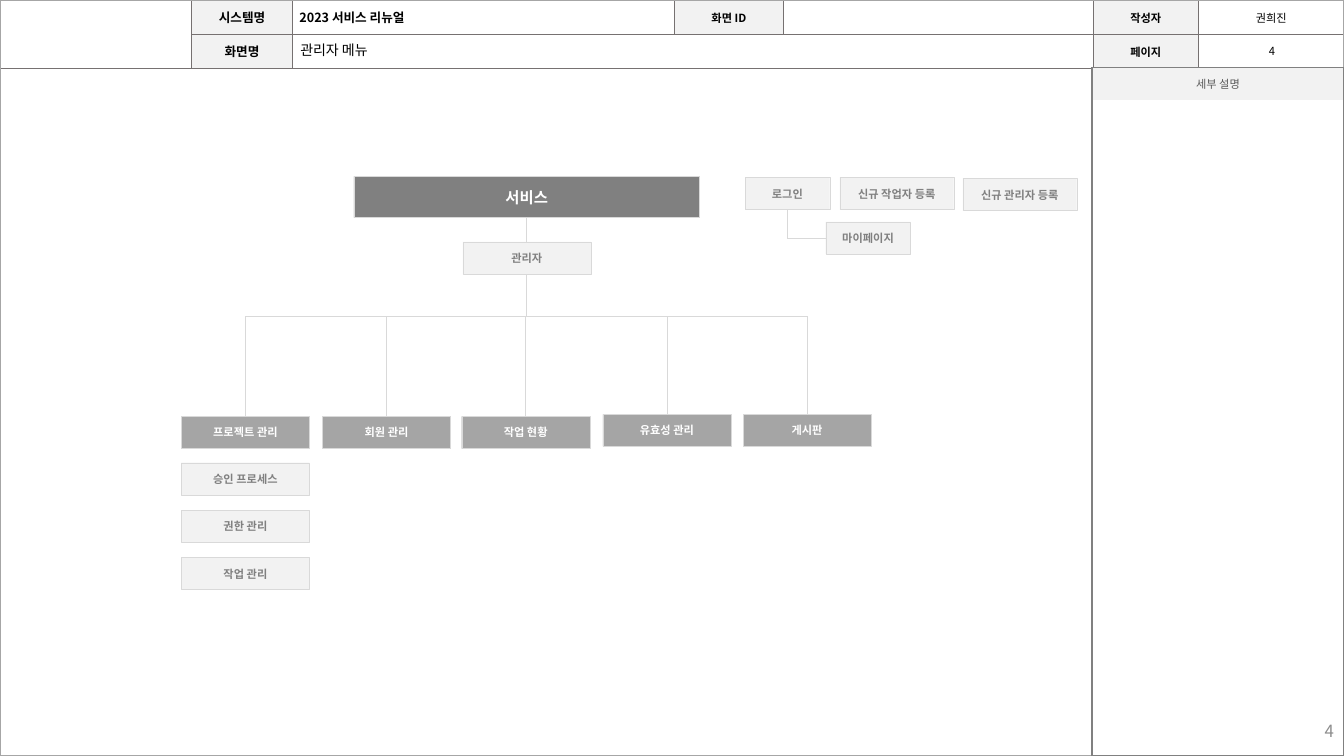
from lxml import etree
from pptx import Presentation
from pptx.dml.color import RGBColor
from pptx.enum import shapes, text
from pptx.oxml.ns import qn
from pptx.util import Inches, Pt

HEADER = {
    "columns": [1.9, 1, 3.79, 1.08, 3.07, 1.05, 1.44],
    "rows": [0.34, 0.34],
    "labels": {"시스템명": (0, 1, 9), "화면명": (1, 1, 9), "화면 ID": (0, 3, 8),
               "작성자": (0, 5, 8), "페이지": (1, 5, 8)},
    "system": "2023 서비스 리뉴얼",
    "author": "권희진",
    "screen": "관리자 메뉴",
}
DETAIL_TITLE = "세부 설명"
PAGE = "4"

# label, left, top, width, height
SITE = ("서비스", 3.51, 1.75, 3.43, 0.41)
ADMIN = ("관리자", 4.59, 2.4, 1.27, 0.32)
LOGIN = ("로그인", 7.39, 1.76, 0.84, 0.32)
MY_PAGE = ("마이페이지", 8.19, 2.2, 0.84, 0.32)
SIGN_UPS = [("신규 작업자 등록", 8.33, 1.76, 1.13, 0.32),
            ("신규 관리자 등록", 9.55, 1.77, 1.13, 0.32)]
# label, left, top
MENUS = [("프로젝트 관리", 1.8, 4.13), ("회원 관리", 3.2, 4.13), ("작업 현황", 4.58, 4.13),
         ("유효성 관리", 5.98, 4.11), ("게시판", 7.37, 4.11)]
PROJECT_PAGES = ["승인 프로세스", "권한 관리", "작업 관리"]
MENU_SIZE = (1.27, 0.32)
PAGE_TOP, PAGE_STEP = 4.59, 0.47
BUS_Y = 3.14

THEME = {
    "font": "Noto Sans CJK KR",
    "black": "000000", "white": "FFFFFF", "detail": "595959", "number": "8C8C8C",
    "dark": "808080", "mid": "A5A5A5", "light": "F2F2F2",
    "outline": "D9D9D9", "frame": "A6A6A6", "grid": "767171",
    "small": 8, "normal": 9, "screen": 10, "site": 11, "page": 12,
}
CENTER, LEFT, RIGHT = text.PP_ALIGN.CENTER, text.PP_ALIGN.LEFT, text.PP_ALIGN.RIGHT
MIDDLE = text.MSO_ANCHOR.MIDDLE


def color(name):
    return RGBColor.from_string(THEME[name])


def write(paragraph, words, size, ink, bold=False, align=CENTER):
    paragraph.text = words
    paragraph.alignment = align
    font = paragraph.font
    font.size, font.bold, font.name = Pt(size), bold, THEME["font"]
    font.color.rgb = color(ink)
    etree.SubElement(font._rPr, qn("a:ea"), typeface=THEME["font"])


def set_borders(cell, ink, width, sides):
    """Draw the given sides (from L, R, T, B) and clear the others."""
    properties = cell._tc.get_or_add_tcPr()
    for index, side in enumerate("LRTB"):
        line = etree.Element(qn("a:ln" + side), w=str(Pt(width)))
        if side in sides:
            fill = etree.SubElement(line, qn("a:solidFill"))
            etree.SubElement(fill, qn("a:srgbClr"), val=THEME[ink])
        else:
            etree.SubElement(line, qn("a:noFill"))
        properties.insert(index, line)


def add_plain_table(slide, left, top, columns, rows):
    """Add a table without style effects, with tight margins and small empty cells."""
    table = slide.shapes.add_table(
        len(rows), len(columns), Inches(left), Inches(top),
        Inches(sum(columns)), Inches(sum(rows))).table
    table.first_row = table.horz_banding = False
    for column, width in zip(table.columns, columns):
        column.width = Inches(width)
    for row, height in zip(table.rows, rows):
        row.height = Inches(height)
    for cell in table.iter_cells():
        cell.fill.background()
        cell.vertical_anchor = MIDDLE
        cell.margin_left = cell.margin_right = Inches(0.05)
        cell.margin_top = cell.margin_bottom = Inches(0.02)
        end = cell.text_frame.paragraphs[0]._p.get_or_add_endParaRPr()
        end.set("sz", str(THEME["small"] * 100))
    return table


def fill_cell(cell, words, size, ink="black", bold=False, align=CENTER, shade=None):
    write(cell.text_frame.paragraphs[0], words, size, ink, bold, align)
    if shade:
        cell.fill.solid()
        cell.fill.fore_color.rgb = color(shade)


def add_text(slide, words, left, top, width, height, size, ink, align, inset=0.1):
    frame = slide.shapes.add_textbox(
        Inches(left), Inches(top), Inches(width), Inches(height)).text_frame
    frame.word_wrap = True
    frame.vertical_anchor = MIDDLE
    frame.margin_left = frame.margin_right = Inches(inset)
    frame.margin_top = frame.margin_bottom = Inches(0.02)
    write(frame.paragraphs[0], words, size, ink, align=align)
    return frame.paragraphs[0]


def add_box(slide, words, left, top, width, height, shade="light", ink="dark", size=THEME["small"]):
    shape = slide.shapes.add_shape(
        shapes.MSO_SHAPE.RECTANGLE, Inches(left), Inches(top), Inches(width), Inches(height))
    shape.shadow.inherit = False
    shape.fill.solid()
    shape.fill.fore_color.rgb = color(shade)
    shape.line.color.rgb = color("outline")
    shape.line.width = Pt(0.25)
    shape.text_frame.vertical_anchor = MIDDLE
    shape.text_frame.margin_left = shape.text_frame.margin_right = Inches(0.05)
    write(shape.text_frame.paragraphs[0], words, size, ink, bold=True)
    return shape


def add_line(slide, start, end, begin=None, finish=None):
    """Draw a line; begin and finish are optional (shape, side) joints."""
    line = slide.shapes.add_connector(shapes.MSO_CONNECTOR.STRAIGHT, *start, *end)
    line.line.color.rgb = color("outline")
    line.line.width = Pt(0.5)
    etree.SubElement(line._element.spPr, qn("a:effectLst"))
    if begin:
        line.begin_connect(*begin)
    if finish:
        line.end_connect(*finish)


def center_x(shape):
    return shape.left + shape.width // 2


def bottom(shape):
    return shape.top + shape.height


def build_header(slide):
    table = add_plain_table(slide, 0, 0, HEADER["columns"], HEADER["rows"])
    for cell in table.iter_cells():
        set_borders(cell, "grid", 0.5, "LRTB")
    table.cell(0, 0).merge(table.cell(1, 0))
    table.cell(1, 2).merge(table.cell(1, 4))
    for label, (row, column, size) in HEADER["labels"].items():
        fill_cell(table.cell(row, column), label, size, bold=True, shade="light")
    system = table.cell(0, 2)
    system.margin_left = Inches(0.07)
    fill_cell(system, HEADER["system"], THEME["normal"], bold=True, align=LEFT)
    fill_cell(table.cell(0, 6), HEADER["author"], THEME["small"])


def build_frame(slide, presentation):
    frame = slide.shapes.add_shape(
        shapes.MSO_SHAPE.RECTANGLE, 0, 0, presentation.slide_width, presentation.slide_height)
    frame.shadow.inherit = False
    frame.fill.background()
    frame.line.color.rgb = color("frame")
    frame.line.width = Pt(1.3)


def build_detail(slide):
    table = add_plain_table(slide, 10.83, 0.67, [2.5], [0.32, 6.51])
    set_borders(table.cell(0, 0), "dark", 1, "LRT")
    set_borders(table.cell(1, 0), "dark", 1, "LRB")
    fill_cell(table.cell(0, 0), DETAIL_TITLE, THEME["small"], "detail", shade="light")


def build_site_map(slide):
    site = add_box(slide, *SITE, shade="dark", ink="white", size=THEME["site"])
    admin = add_box(slide, *ADMIN)
    menus = [add_box(slide, *menu, *MENU_SIZE, shade="mid", ink="white") for menu in MENUS]
    for index, label in enumerate(PROJECT_PAGES):
        add_box(slide, label, MENUS[0][1], PAGE_TOP + index * PAGE_STEP, *MENU_SIZE)

    bus = Inches(BUS_Y)
    trunk = center_x(admin)
    add_line(slide, (trunk, bottom(site)), (trunk, admin.top), (site, 2), (admin, 0))
    add_line(slide, (trunk, bottom(admin)), (trunk, bus), begin=(admin, 2))
    add_line(slide, (center_x(menus[0]), bus), (center_x(menus[-1]), bus))
    for menu in menus:
        add_line(slide, (center_x(menu), bus), (center_x(menu), menu.top), finish=(menu, 0))


def build_account_pages(slide):
    login = add_box(slide, *LOGIN)
    my_page = add_box(slide, *MY_PAGE)
    for sign_up in SIGN_UPS:
        add_box(slide, *sign_up)
    corner = (center_x(login), my_page.top + my_page.height // 2)
    add_line(slide, (corner[0], bottom(login)), corner, begin=(login, 2))
    add_line(slide, corner, (my_page.left, corner[1]), finish=(my_page, 1))


def main():
    presentation = Presentation()
    presentation.slide_width, presentation.slide_height = Inches(13.33), Inches(7.5)
    slide = presentation.slides.add_slide(presentation.slide_layouts[6])
    build_header(slide)
    build_frame(slide, presentation)
    add_text(slide, PAGE, 12.48, 0.43, 0.27, 0.16, THEME["small"], "black", CENTER, 0.04)
    build_detail(slide)
    add_text(slide, PAGE, 10.33, 7.15, 3, 0.2, THEME["page"], "number", RIGHT)
    screen = add_text(slide, HEADER["screen"], 2.88, 0.36, 6.28, 0.3, THEME["screen"], "black", LEFT)
    screen.line_spacing = 0.9
    build_site_map(slide)
    build_account_pages(slide)
    presentation.save("out.pptx")


if __name__ == "__main__":
    main()
